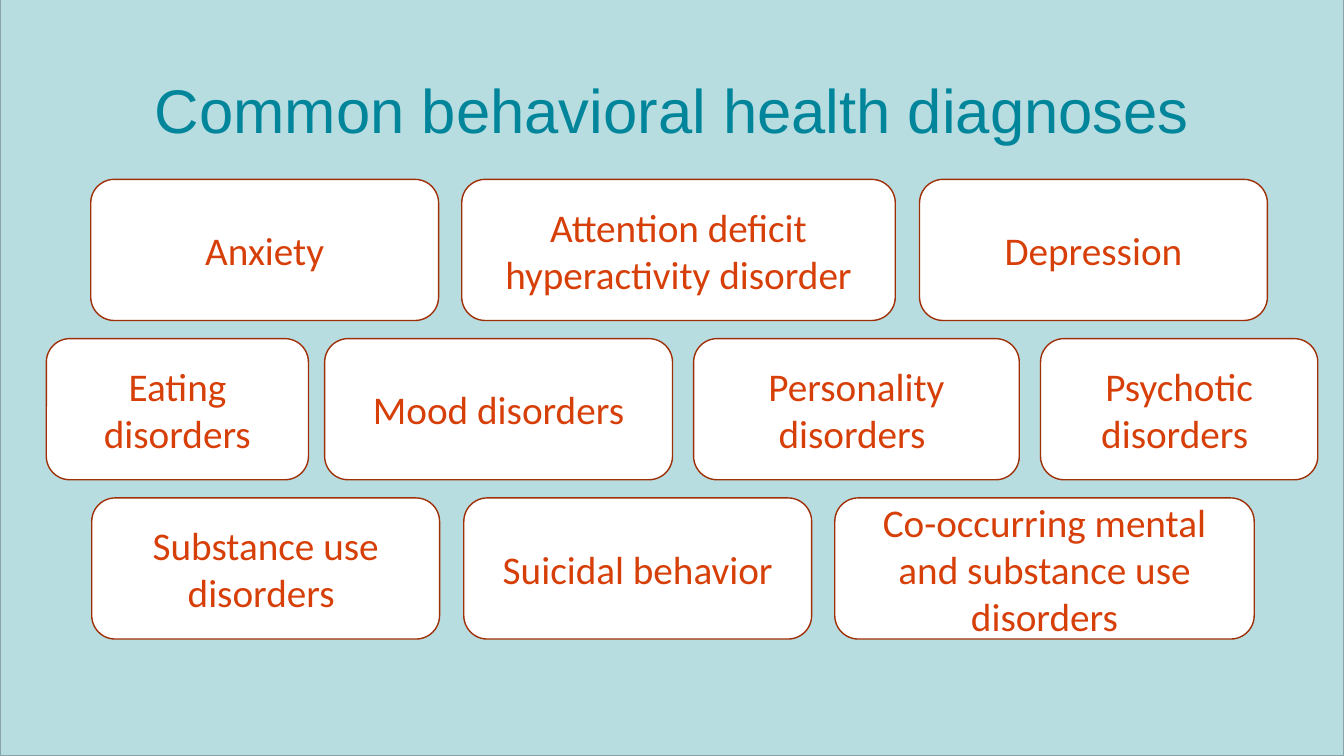
import pptx
import pptx.util
import pptx.dml.color
import pptx.enum.shapes
import pptx.enum.text

SHAPE = pptx.enum.shapes.MSO_SHAPE
CENTER = pptx.enum.text.PP_ALIGN.CENTER
MIDDLE = pptx.enum.text.MSO_ANCHOR.MIDDLE
inch = pptx.util.Inches

WIDTH, HEIGHT = 13.33, 7.5
ROW_TOP, ROW_PITCH, CARD_HEIGHT = 1.78, 1.58, 1.4

# Each row of cards: (left, width, diagnosis)
DIAGNOSES = [
    [(0.9, 3.45, "Anxiety"),
     (4.58, 4.3, "Attention deficit hyperactivity disorder"),
     (9.12, 3.45, "Depression")],
    [(0.46, 2.6, "Eating disorders"),
     (3.22, 3.45, "Mood disorders"),
     (6.88, 3.23, "Personality disorders "),
     (10.32, 2.75, "Psychotic disorders ")],
    [(0.91, 3.45, "Substance use disorders "),
     (4.6, 3.45, "Suicidal behavior"),
     (8.28, 4.16, "Co-occurring mental and substance use disorders")],
]


def color(value):
    return pptx.dml.color.RGBColor.from_string(value)


def add_box(s, kind, left, top, width, height, fill, line):
    sp = s.shapes.add_shape(kind, inch(left), inch(top), inch(width), inch(height))
    sp.shadow.inherit = False
    sp.fill.solid()
    sp.fill.fore_color.rgb = color(fill)
    sp.line.color.rgb = color(line)
    sp.line.width = pptx.util.Pt(1)
    return sp


def set_text(sp, text, font, size, text_color):
    tf = sp.text_frame
    tf.word_wrap = True
    tf.vertical_anchor = MIDDLE
    p = tf.paragraphs[0]
    p.text = text
    p.alignment = CENTER
    p.font.name = font
    p.font.size = pptx.util.Pt(size)
    p.font.color.rgb = color(text_color)
    return p


def add_card(s, row, left, width, text):
    top = ROW_TOP + row * ROW_PITCH
    sp = add_box(s, SHAPE.ROUNDED_RECTANGLE, left, top, width, CARD_HEIGHT,
                 "FFFFFF", "9F2F07")
    set_text(sp, text, "Calibri", 28, "D73F09")


def format_title(s, text):
    title = s.shapes.title
    title.left, title.top = inch(0.92), inch(0.4)
    title.width, title.height = inch(11.5), inch(1.45)
    p = set_text(title, text, "Arial", 44, "00859B")
    p.line_spacing = 0.9


def main():
    prs = pptx.Presentation()
    prs.slide_width, prs.slide_height = inch(WIDTH), inch(HEIGHT)
    s = prs.slides.add_slide(prs.slide_layouts[5])

    # Backdrop, placed behind the title
    backdrop = add_box(s, SHAPE.RECTANGLE, 0, -0.1, WIDTH, HEIGHT + 0.1,
                       "B8DDE1", "88A3A6")
    s.shapes.title._element.addprevious(backdrop._element)

    # Title
    format_title(s, "Common behavioral health diagnoses")

    # Diagnosis cards
    for row, cards in enumerate(DIAGNOSES):
        for left, width, text in cards:
            add_card(s, row, left, width, text)

    prs.save("out.pptx")


if __name__ == "__main__":
    main()
